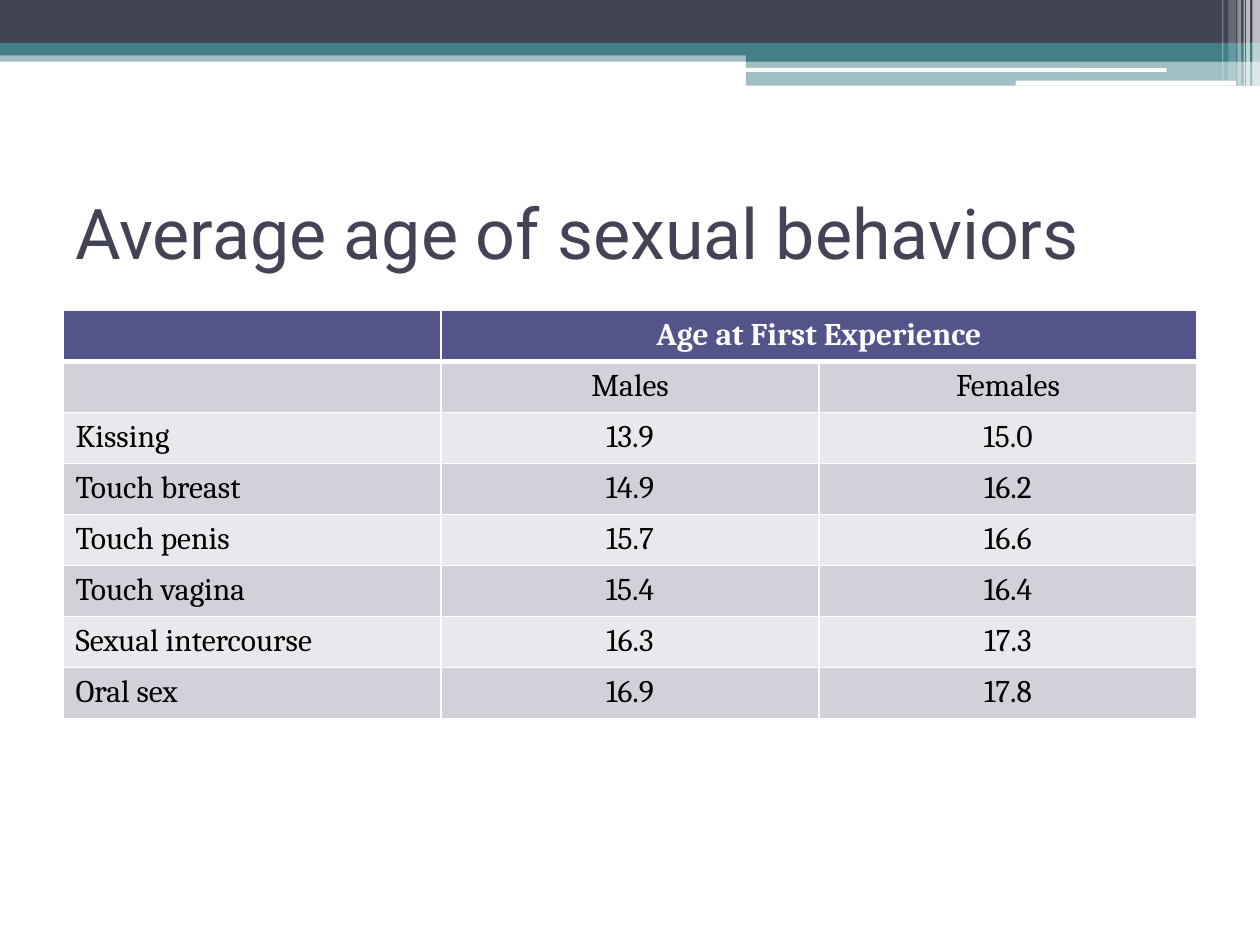
"""Build a slide with a table of average ages under a banded header."""
from dataclasses import dataclass

from lxml import etree
from pptx import Presentation
from pptx.dml.color import RGBColor
from pptx.enum.shapes import MSO_SHAPE
from pptx.enum.text import MSO_ANCHOR, PP_ALIGN
from pptx.oxml.ns import qn
from pptx.util import Inches, Pt

RECT, ROUNDED = MSO_SHAPE.RECTANGLE, MSO_SHAPE.ROUNDED_RECTANGLE
LEFT, CENTER, MIDDLE = PP_ALIGN.LEFT, PP_ALIGN.CENTER, MSO_ANCHOR.MIDDLE

SLATE = RGBColor(0x42, 0x44, 0x56)
TEAL = RGBColor(0x43, 0x80, 0x86)
INDIGO = RGBColor(0x53, 0x54, 0x8A)
DARK_ROW = RGBColor(0xD1, 0xD1, 0xDA)
LIGHT_ROW = RGBColor(0xE9, 0xE9, 0xED)
WHITE = RGBColor(0xFF, 0xFF, 0xFF)
BLACK = RGBColor(0, 0, 0)

SLIDE_WIDTH, SLIDE_HEIGHT = Inches(10), Inches(7.5)
COLUMN, ROW = SLIDE_WIDTH / 100, SLIDE_HEIGHT / 75
MARGIN, CONTENT_WIDTH = 5, 90
TITLE_TOP, TITLE_HEIGHT = 12.5, 11.7
TABLE_TOP, TABLE_HEIGHT = 24.65, 32.4

AGES = [
    ("", "Age at First Experience", ""),
    ("", "Males", "Females"),
    ("Kissing", "13.9", "15.0"),
    ("Touch breast", "14.9", "16.2"),
    ("Touch penis", "15.7", "16.6"),
    ("Touch vagina", "15.4", "16.4"),
    ("Sexual intercourse", "16.3", "17.3"),
    ("Oral sex", "16.9", "17.8"),
]


@dataclass(frozen=True)
class Band:
    """A header strip placed in grid columns and rows, with opacity in percent."""
    left: float
    top: float
    width: float
    height: float
    color: RGBColor = WHITE
    opacity: int = 100
    outline: int = RECT


BANDS = [
    Band(0, 4, 100, 0.9, TEAL, 50),
    Band(0, 0, 100, 3.4, SLATE),
    Band(0, 3.4, 100, 1, TEAL),
    Band(59.2, 3.9, 40.8, 1, TEAL),
    Band(59.2, 4.8, 40.8, 2, TEAL, 50),
    Band(59.1, 5.4, 33.5, 0.3, outline=ROUNDED),
    Band(80.6, 6.4, 17.5, 0.4, outline=ROUNDED),
    Band(99.4, 0, 0.6, 6.8, opacity=65),
    Band(98.9, 0, 0.3, 6.8, opacity=65),
    Band(98.7, 0, 0.1, 6.8, opacity=60),
    Band(98.2, 0, 0.3, 6.8, opacity=40),
    Band(97.5, 0, 0.6, 6.4, opacity=20),
    Band(97, 0, 0.1, 6.4, opacity=30),
]


def grid_box(left: float, top: float, width: float, height: float) -> tuple[int, ...]:
    """Turn grid columns and rows into slide lengths."""
    return int(left * COLUMN), int(top * ROW), int(width * COLUMN), int(height * ROW)


def draw_band(slide, band: Band) -> None:
    """Draw one header strip."""
    strip = slide.shapes.add_shape(
        band.outline, *grid_box(band.left, band.top, band.width, band.height))
    strip.shadow.inherit = False
    strip.line.fill.background()
    strip.fill.solid()
    strip.fill.fore_color.rgb = band.color
    if band.opacity < 100:
        color = strip.fill._xPr.find(".//" + qn("a:srgbClr"))
        etree.SubElement(color, qn("a:alpha"), val=str(band.opacity * 1000))


def draw_title(slide, wording: str) -> None:
    """Place and format the title placeholder."""
    title = slide.shapes.title
    title.left, title.top, title.width, title.height = grid_box(
        MARGIN, TITLE_TOP, CONTENT_WIDTH, TITLE_HEIGHT)
    title.text_frame.text = wording
    title.text_frame.vertical_anchor = MIDDLE
    heading = title.text_frame.paragraphs[0]
    heading.alignment = LEFT
    heading.font.name, heading.font.size = "Roboto", Pt(40)
    heading.font.color.rgb = SLATE


def add_borders(cell, **widths: float) -> None:
    """Give a cell white borders, with widths in points by side."""
    for side, width in widths.items():
        border = etree.SubElement(
            cell._tc.get_or_add_tcPr(), qn(f"a:ln{side}"), w=str(Pt(width)))
        fill = etree.SubElement(border, qn("a:solidFill"))
        etree.SubElement(fill, qn("a:srgbClr"), val=str(WHITE))


def format_cell(cell, wording: str, row: int, column: int) -> None:
    """Fill, border and letter one table cell."""
    is_header = row == 0
    add_borders(cell, L=1, R=1, T=3 if row == 1 else 1, B=3 if is_header else 1)
    cell.fill.solid()
    cell.fill.fore_color.rgb = INDIGO if is_header else (LIGHT_ROW, DARK_ROW)[row % 2]
    cell.text = wording
    entry = cell.text_frame.paragraphs[0]
    entry.alignment = CENTER if column else LEFT
    entry.font.name, entry.font.size = "Cambria", Pt(18)
    entry.font.bold = is_header
    entry.font.color.rgb = WHITE if is_header else BLACK


def draw_ages(slide, ages: list[tuple[str, ...]]) -> None:
    """Draw the table, with its header joined over the value columns."""
    table = slide.shapes.add_table(
        len(ages), len(ages[0]),
        *grid_box(MARGIN, TABLE_TOP, CONTENT_WIDTH, TABLE_HEIGHT)).table
    for row, entries in enumerate(ages):
        for column, wording in enumerate(entries):
            format_cell(table.cell(row, column), wording, row, column)
    table.cell(0, 1).merge(table.cell(0, 2))


def main() -> None:
    """Build and save the slide."""
    deck = Presentation()
    deck.slide_width, deck.slide_height = SLIDE_WIDTH, SLIDE_HEIGHT
    slide = deck.slides.add_slide(deck.slide_layouts.get_by_name("Title Only"))
    for band in BANDS:
        draw_band(slide, band)
    draw_title(slide, "Average age of sexual behaviors")
    draw_ages(slide, AGES)
    deck.save("out.pptx")


if __name__ == "__main__":
    main()
